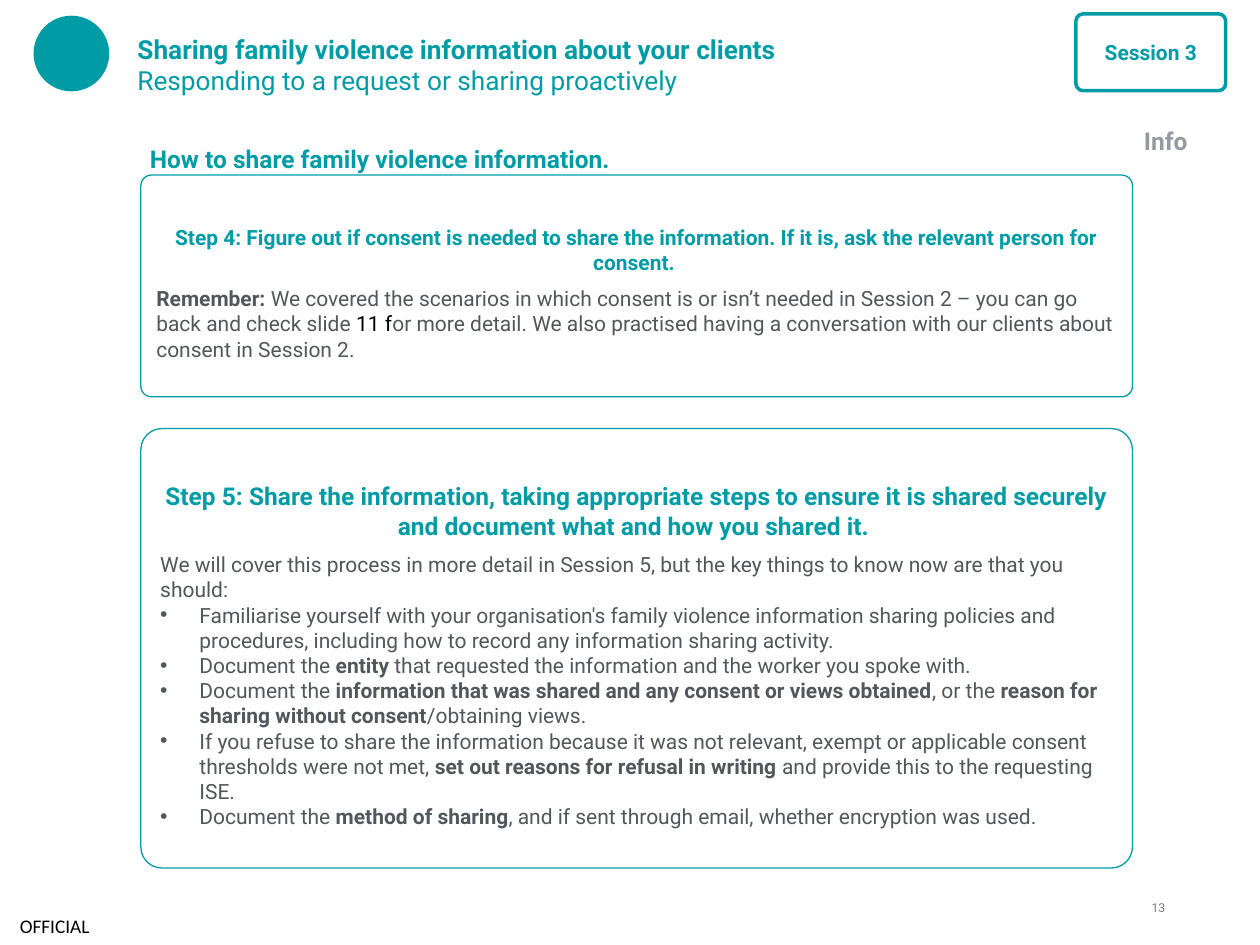
from typing import NamedTuple

from lxml.etree import SubElement
from pptx import Presentation
from pptx.dml.color import RGBColor
from pptx.enum.shapes import MSO_SHAPE as Shape
from pptx.enum.text import MSO_ANCHOR as Anchor, MSO_AUTO_SIZE as AutoSize, PP_ALIGN as Align
from pptx.oxml.ns import qn
from pptx.util import Cm, Pt

TEAL, GREY, BLACK, WHITE = "009CA6", "53565A", "000000", "FFFFFF"

STEP_4 = "Step 4: Figure out if consent is needed to share the information. If it is, ask the relevant person for consent. "
REMEMBER = [
    ("Remember: ", True),
    ("We covered the scenarios in which consent is or isn’t needed in Session 2 – you can go back and check slide ", False),
    ("11 f", False, BLACK),
    ("or more detail. We also practised having a conversation with our clients about consent in Session 2.", False),
]
STEP_5 = ("Step 5: Share the information, taking appropriate steps to ensure it is shared securely "
          "and document what and how you shared it. ")
INTRO = [("We will cover this process in more detail in Session 5, but the key things to know now are that you should:", False)]
ACTIONS = [
    [("Familiarise yourself with your organisation's family violence information sharing policies and procedures, "
      "including how to record any information sharing activity. ", False)],
    [("Document the ", False), ("entity ", True),
     ("that requested the information and the worker you spoke with.", False)],
    [("Document the ", False), ("information that was shared and any consent or views obtained", True),
     (", or the ", False), ("reason for sharing without consent", True), ("/obtaining views.", False)],
    [("If you refuse to share the information because it was not relevant, exempt or applicable consent "
      "thresholds were not met, ", False), ("set out reasons for refusal in writing", True),
     (" and provide this to the requesting ISE.", False)],
    [("Document the ", False), ("method of sharing", True),
     (", and if sent through email, whether encryption was used.", False)],
]


class Box(NamedTuple):
    left: float
    top: float
    width: float
    height: float

    def lengths(self):
        return [Cm(value) for value in self]


def colour(hex_text):
    return RGBColor.from_string(hex_text)


def style(para, size, hex_text, bold=None, align=Align.LEFT, after=0, name="Roboto"):
    para.alignment = align
    para.space_before = Pt(0)
    para.space_after = Pt(after)
    para.font.name = name
    para.font.size = Pt(size)
    para.font.bold = bold
    para.font.color.rgb = colour(hex_text)


def add_spans(para, spans):
    for text, bold, *hex_text in spans:
        span = para.add_run()
        span.text = text
        span.font.bold = bold
        if hex_text:
            span.font.color.rgb = colour(hex_text[0])


def set_bullet(para, mark=None):
    properties = para._p.get_or_add_pPr()
    indent = Cm(0.79) if mark else 0
    properties.set("marL", str(indent))
    properties.set("indent", str(-indent))
    if mark:
        SubElement(properties, qn("a:buChar"), char=mark)
    else:
        SubElement(properties, qn("a:buNone"))


def set_frame(frame, anchor=Anchor.TOP, insets=(0, 0, 0, 0)):
    frame.word_wrap = True
    frame.auto_size = AutoSize.NONE
    frame.vertical_anchor = anchor
    frame.margin_left, frame.margin_top, frame.margin_right, frame.margin_bottom = map(Cm, insets)


def place(placeholder, box):
    placeholder.left, placeholder.top, placeholder.width, placeholder.height = box.lengths()


def add_outline(page, kind, box, line_width, fill=None, corner=None):
    shape = page.shapes.add_shape(kind, *box.lengths())
    shape.shadow.inherit = False
    if fill:
        shape.fill.solid()
        shape.fill.fore_color.rgb = colour(fill)
    else:
        shape.fill.background()
    shape.line.color.rgb = colour(TEAL)
    shape.line.width = Pt(line_width)
    if corner:
        shape.adjustments[0] = corner
    return shape


def add_label(page, box, text, size, hex_text, insets=(0.25, 0.13, 0.25, 0.13), anchor=Anchor.TOP, **look):
    frame = page.shapes.add_textbox(*box.lengths()).text_frame
    set_frame(frame, anchor, insets)
    para = frame.paragraphs[0]
    para.text = text
    style(para, size, hex_text, **look)


def build_header(page, box):
    add_outline(page, Shape.OVAL, Box(box.left, box.top + 0.05, 1.5, 1.5), 0.75, TEAL)

    title = page.shapes.title
    place(title, Box(box.left + 2.08, box.top + 0.2, 17.42, 1.65))
    set_frame(title.text_frame, Anchor.MIDDLE)
    para = title.text_frame.paragraphs[0]
    style(para, 15, TEAL, after=3.4)
    add_spans(para, [("Sharing family violence information about your clients ", True)])
    para.add_line_break()
    add_spans(para, [("Responding to a request or sharing proactively", False)])

    badge = add_outline(page, Shape.ROUNDED_RECTANGLE,
                        Box(box.left + box.width - 3.02, box.top, 3.02, 1.55), 2, WHITE, 0.094)
    set_frame(badge.text_frame, Anchor.MIDDLE, (0.5, 0.13, 0.5, 0.13))
    para = badge.text_frame.paragraphs[0]
    para.text = "Session 3"
    style(para, 12, TEAL, True, Align.CENTER, 6)


def build_card(page, box, heading, size):
    card = add_outline(page, Shape.ROUNDED_RECTANGLE, box, 0.75, corner=0.048)
    set_frame(card.text_frame, insets=(0.25, 0.94, 0.25, 0.13))
    para = card.text_frame.paragraphs[0]
    para.text = heading
    style(para, size, TEAL, True, Align.CENTER, 6)
    return card.text_frame


def build_consent_card(page, box):
    frame = build_card(page, box, STEP_4, 12)
    para = frame.add_paragraph()
    style(para, 12, GREY)
    add_spans(para, REMEMBER)


def build_sharing_card(page, box):
    build_card(page, box, STEP_5, 14)
    body = page.placeholders[1]
    place(body, Box(box.left + 0.39, box.top + 2.48, box.width - 0.78, box.height - 2.8))
    frame = body.text_frame
    set_frame(frame)
    for index, spans in enumerate([INTRO, *ACTIONS]):
        para = frame.add_paragraph() if index else frame.paragraphs[0]
        set_bullet(para, "•" if index else None)
        style(para, 12, GREY)
        add_spans(para, spans)


def build_footer(page, box):
    add_label(page, Box(box.left, box.top + 0.12, 2.21, 0.79), "OFFICIAL", 11, BLACK,
              (0.4, 0, 0, 0), Anchor.MIDDLE, name="Calibri")
    add_label(page, Box(box.left + box.width - 0.86, box.top, 0.86, 0.51), "13", 7, "7F7F7F",
              (0, 0, 0, 0), align=Align.RIGHT)


def main():
    deck = Presentation()
    deck.slide_width, deck.slide_height = Cm(25.4), Cm(19.05)
    page = deck.slides.add_slide(deck.slide_layouts[1])
    build_header(page, Box(0.69, 0.28, 24.02, 1.85))
    add_label(page, Box(22.81, 2.41, 2.59, 0.86), "Info", 14, "96999E", bold=True)
    add_label(page, Box(2.77, 2.77, 22.45, 0.86), "How to share family violence information.", 14, TEAL, bold=True)
    build_consent_card(page, Box(2.84, 3.53, 19.99, 4.47))
    build_sharing_card(page, Box(2.84, 8.64, 19.99, 8.86))
    build_footer(page, Box(0, 18.14, 23.49, 0.91))
    deck.save("out.pptx")


if __name__ == "__main__":
    main()
